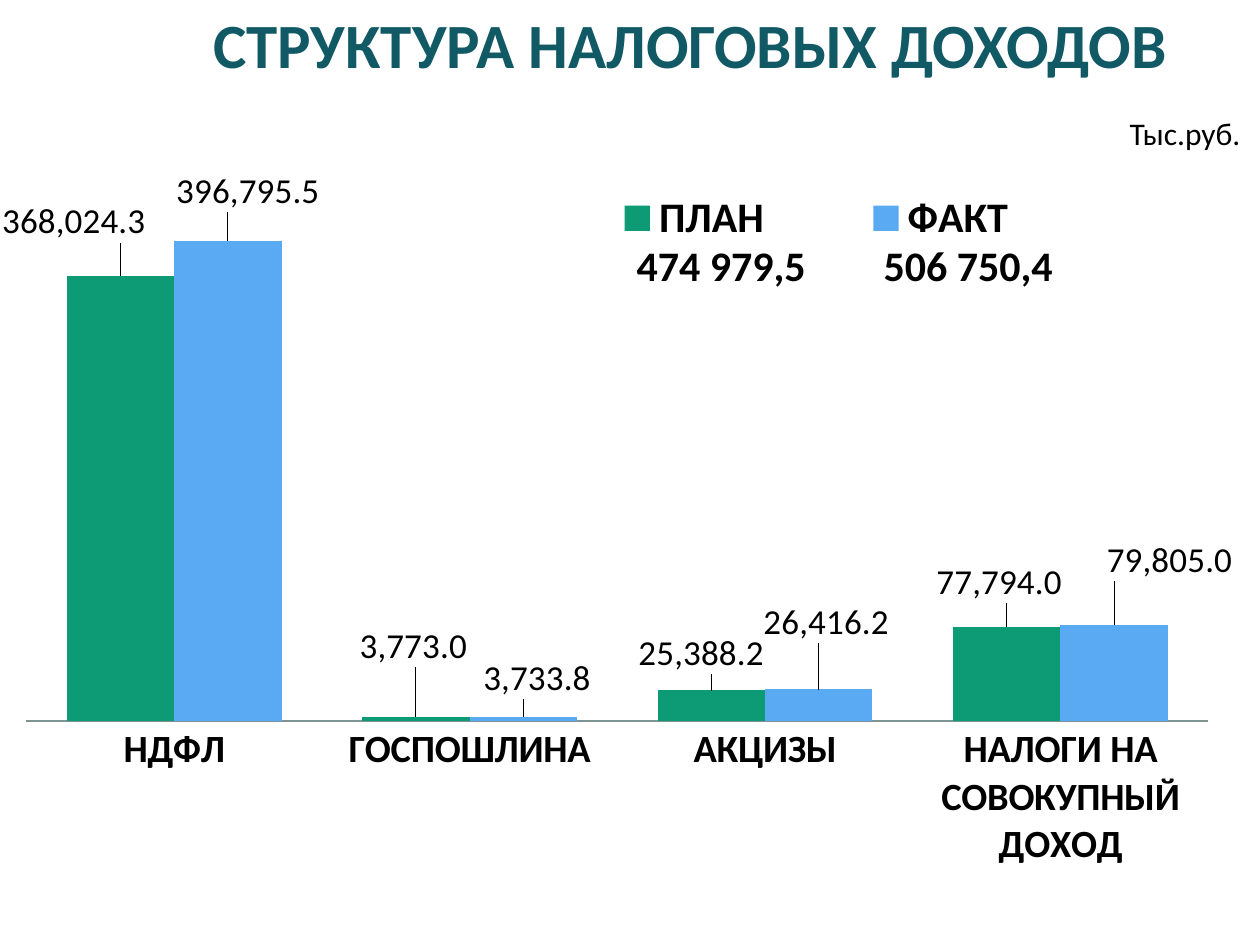
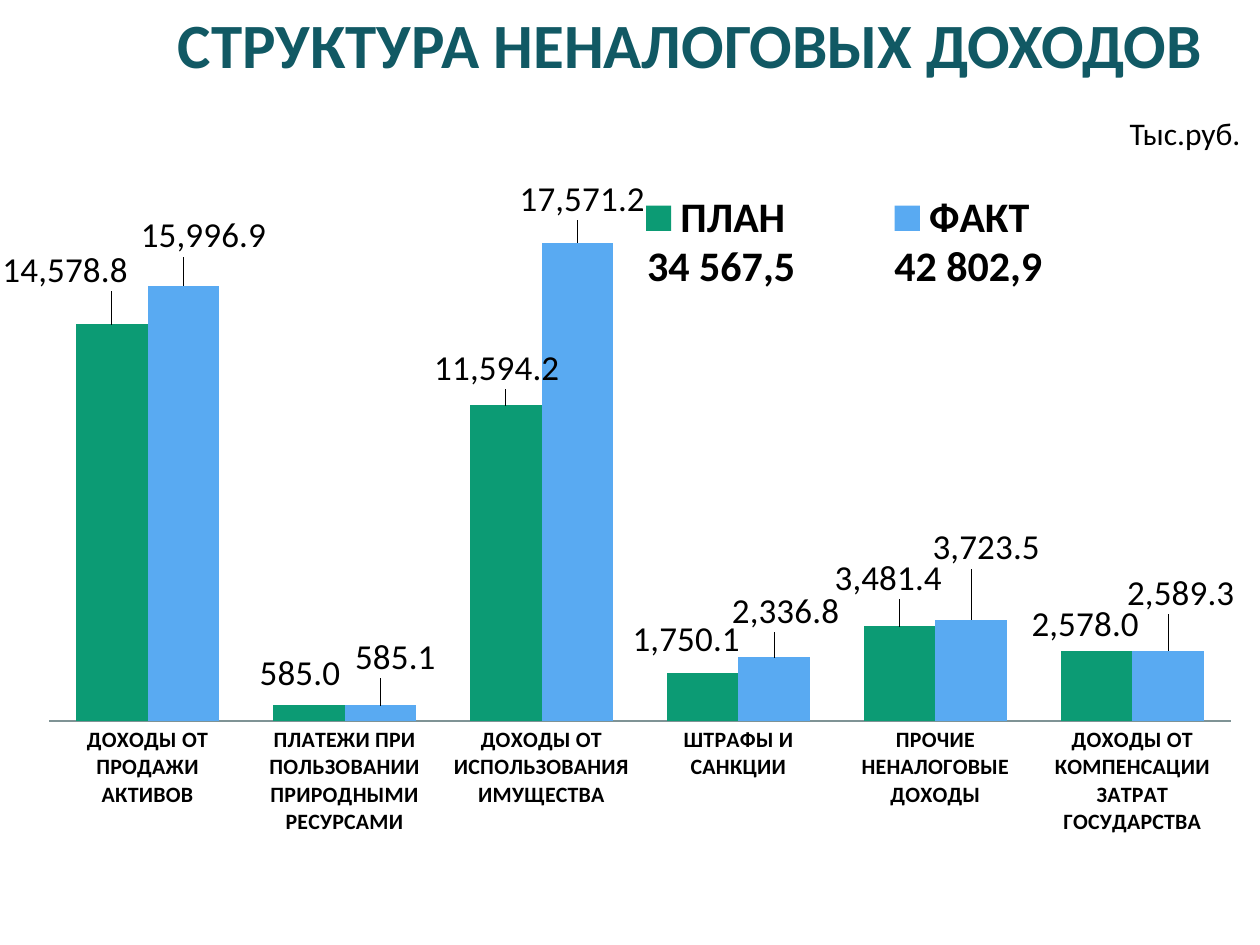
from lxml.etree import SubElement, Element
from pptx import Presentation
from pptx.chart.data import CategoryChartData
from pptx.dml.color import RGBColor
from pptx.enum.chart import (XL_CHART_TYPE as ChartType, XL_LABEL_POSITION as LabelPos,
                             XL_LEGEND_POSITION as LegendPos, XL_TICK_MARK as TickMark)
from pptx.enum.text import MSO_ANCHOR as Anchor, PP_ALIGN as Align
from pptx.oxml.ns import qn
from pptx.util import Cm, Pt

FONT = "Calibri"
COLORS = {"title": "115964", "text": "000000", "axis": "7F9395",
          "ПЛАН": "0C9B74", "ФАКТ": "59AAF2"}
VALUE_FORMAT = "#,##0.0"
UNIT = "Тыс.руб."

# Content: shifts move each value label, in percent of the chart's width and height
SLIDES = [
    {
        "title": "СТРУКТУРА НАЛОГОВЫХ ДОХОДОВ",
        "totals": ("474 979,5", "506 750,4"),
        "categories": ["НДФЛ", "ГОСПОШЛИНА", "АКЦИЗЫ", "НАЛОГИ НА СОВОКУПНЫЙ ДОХОД"],
        "values": {"ПЛАН": [368024.3, 3773, 25388.2, 77794],
                   "ФАКТ": [396795.5, 3733.8, 26416.2, 79805]},
        "shifts": {"ПЛАН": [(-3.7, -3.4), (-0.2, -5.4), (-0.8, -1.3), (-0.6, -2.3)],
                   "ФАКТ": [(1.6, -2.9), (1.1, -1.5), (0.6, -5), (4.4, -4.7)]},
        "category_size": 22, "top_value": 450000, "plot_left": 2.1, "legend_left": 42,
    },
    {
        "title": "СТРУКТУРА НЕНАЛОГОВЫХ ДОХОДОВ",
        "totals": ("34 567,5", "42 802,9"),
        "categories": ["ДОХОДЫ ОТ ПРОДАЖИ АКТИВОВ",
                       "ПЛАТЕЖИ ПРИ ПОЛЬЗОВАНИИ ПРИРОДНЫМИ РЕСУРСАМИ",
                       "ДОХОДЫ ОТ ИСПОЛЬЗОВАНИЯ ИМУЩЕСТВА", "ШТРАФЫ И САНКЦИИ",
                       "ПРОЧИЕ НЕНАЛОГОВЫЕ ДОХОДЫ",
                       "ДОХОДЫ ОТ КОМПЕНСАЦИИ ЗАТРАТ ГОСУДАРСТВА"],
        "values": {"ПЛАН": [14578.8, 585, 11594.2, 1750.1, 3481.4, 2578],
                   "ФАКТ": [15996.9, 585.1, 17571.2, 2336.8, 3723.5, 2589.3]},
        "shifts": {"ПЛАН": [(-3.7, -3.4), (-0.7, -0.7), (-0.7, -1.3), (-1.3, -1),
                            (-0.9, -2.7), (-0.9, 0)],
                   "ФАКТ": [(1.6, -2.9), (1.2, -2.7), (0.4, -2.1), (0.9, -2.4),
                            (1.2, -5.6), (1, -3.8)]},
        "category_size": 12.5, "top_value": 20000, "plot_left": 3.9, "legend_left": 43.7,
    },
]

# Places shared by the slides, in centimetres
TITLE_BOX = (2.11, 0.1, 23.6, 1.5)
UNIT_BOX = (22.33, 2.39, 3.12, 0.58)
TOTAL_BOX = (12.29, 4.95, 4.5, 0.79)
TOTAL_STEP = 4.98
CHART_BOX = (0, 2.59, 25.4, 16.46)


def rgb(name):
    return RGBColor.from_string(COLORS[name])


def style(font, size, bold=False, color="text"):
    font.name, font.size, font.bold = FONT, Pt(size), bold
    font.color.rgb = rgb(color)


def add_text(slide, text, box, size, bold=False, color="text", anchor=Anchor.MIDDLE):
    frame = slide.shapes.add_textbox(*map(Cm, box)).text_frame
    frame.word_wrap = True
    frame.vertical_anchor = anchor
    line = frame.paragraphs[0]
    line.alignment = Align.CENTER
    run = line.add_run()
    run.text = text
    style(run.font, size, bold, color)
    return frame


def make_layout(**percents):
    """Manual chart layout; keys are c:manualLayout tags, numbers are percents."""
    layout = Element(qn("c:layout"))
    manual = SubElement(layout, qn("c:manualLayout"))
    for tag, value in percents.items():
        value = value if isinstance(value, str) else f"{value / 100:.4f}"
        SubElement(manual, qn(f"c:{tag}")).set("val", value)
    return layout


def place(parent, after, layout):
    for old in parent.findall(qn("c:layout")):
        parent.remove(old)
    if after is None:
        parent.insert(0, layout)
    else:
        parent.find(qn(after)).addnext(layout)


def add_labels(series, shifts):
    labels = series.data_labels
    labels.show_value = True
    labels.number_format, labels.number_format_is_linked = VALUE_FORMAT, False
    labels.position = LabelPos.OUTSIDE_END
    style(labels.font, 20)
    for index in range(len(shifts)):
        label = series.points[index].data_label
        label.position = LabelPos.OUTSIDE_END
        style(label.font, 20)


def shift_labels(chart, content):
    """Move every value label from its bar by the listed shift."""
    for element, shifts in zip(chart.element.iter(qn("c:ser")), content["shifts"].values()):
        for label, (x, y) in zip(element.iter(qn("c:dLbl")), shifts):
            number = Element(qn("c:numFmt"), formatCode=VALUE_FORMAT, sourceLinked="0")
            label.find(qn("c:idx")).addnext(number)
            place(label, "c:idx", make_layout(x=x, y=y))


def add_income_chart(slide, content):
    data = CategoryChartData(number_format=VALUE_FORMAT)
    data.categories = content["categories"]
    for name, values in content["values"].items():
        data.add_series(name, values)
    chart = slide.shapes.add_chart(ChartType.COLUMN_CLUSTERED, *map(Cm, CHART_BOX), data).chart
    chart.has_title = False
    style(chart.font, 18)

    # Columns
    plot = chart.plots[0]
    plot.gap_width, plot.overlap, plot.vary_by_categories = 75, 0, False
    for series in plot.series:
        series.format.fill.solid()
        series.format.fill.fore_color.rgb = rgb(series.name)
        add_labels(series, content["shifts"][series.name])
    shift_labels(chart, content)

    # Axes
    categories, amounts = chart.category_axis, chart.value_axis
    categories.major_tick_mark = categories.minor_tick_mark = TickMark.NONE
    categories.format.line.color.rgb = rgb("axis")
    categories.format.line.width = Pt(0.75)
    style(categories.tick_labels.font, content["category_size"], True)
    amounts.minimum_scale, amounts.maximum_scale = 0, content["top_value"]
    amounts.has_major_gridlines = False
    amounts.visible = False

    # Legend and plot area
    chart.has_legend = True
    chart.legend.position = LegendPos.BOTTOM
    chart.legend.include_in_layout = False
    style(chart.legend.font, 24, True)
    place(chart.element.find(".//" + qn("c:legend")), "c:legendPos",
          make_layout(xMode="edge", yMode="edge", x=content["legend_left"], y=7, w=45.6, h=8))
    place(chart.element.find(".//" + qn("c:plotArea")), None,
          make_layout(layoutTarget="inner", xMode="edge", yMode="edge",
                      x=content["plot_left"], y=5.9, w=93.8, h=66.7))


def build_slide(deck, content):
    slide = deck.slides.add_slide(deck.slide_layouts[6])
    left, *rest = TOTAL_BOX
    for index, total in enumerate(content["totals"]):
        add_text(slide, total, (left + index * TOTAL_STEP, *rest), 24, True)
    add_text(slide, UNIT, UNIT_BOX, 18)
    title = add_text(slide, content["title"], TITLE_BOX, 36, True, "title", Anchor.BOTTOM)
    title.margin_left = title.margin_right = title.margin_bottom = 0
    title.paragraphs[0].line_spacing = 0.7
    add_income_chart(slide, content)


def main():
    deck = Presentation()
    deck.slide_width, deck.slide_height = Cm(25.4), Cm(19.05)
    for content in SLIDES:
        build_slide(deck, content)
    deck.save("out.pptx")


if __name__ == "__main__":
    main()
